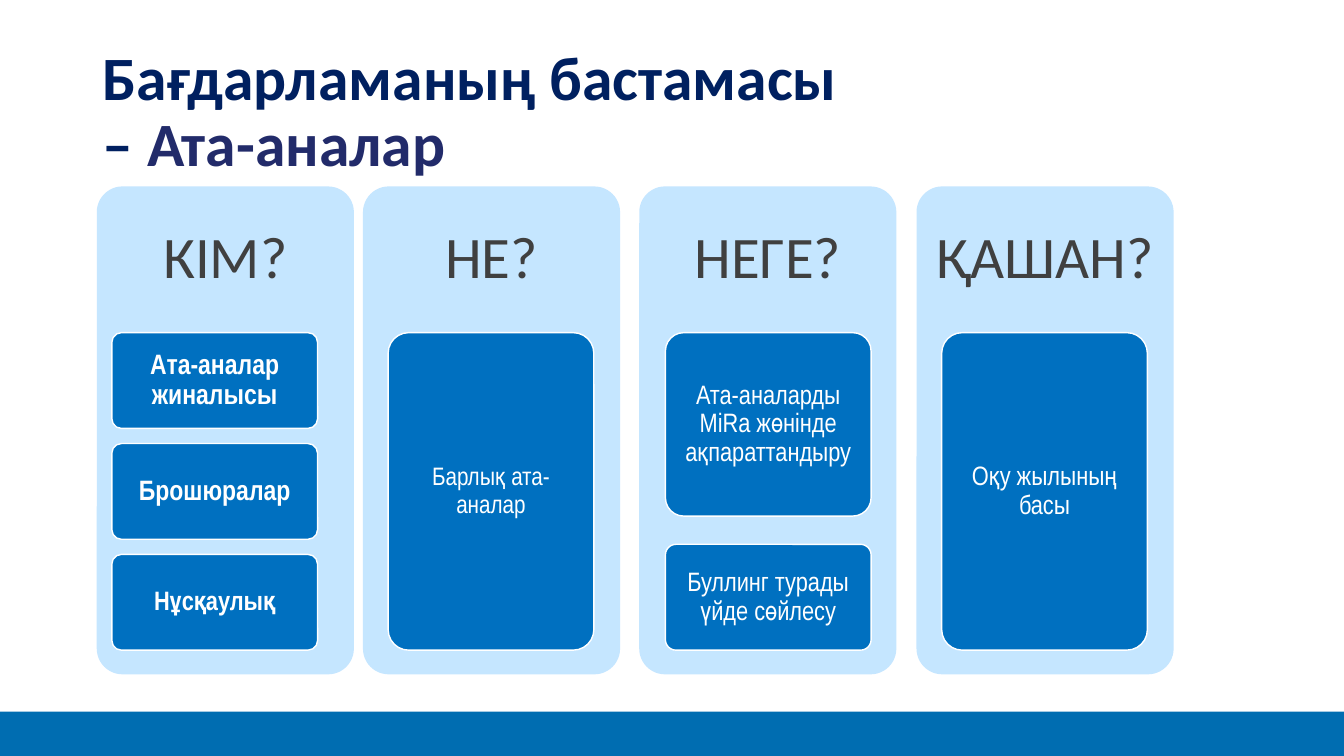
from dataclasses import dataclass

from pptx import Presentation
from pptx.dml.color import RGBColor
from pptx.enum.shapes import MSO_SHAPE
from pptx.enum.text import MSO_ANCHOR, PP_ALIGN
from pptx.shapes.autoshape import Shape
from pptx.slide import Slide
from pptx.util import Inches, Pt

COLORS = {
    "panel": "C5E6FF",
    "card": "0070C0",
    "footer": "006DB1",
    "heading": "404040",
    "title": "002060",
    "subtitle": "222B6A",
    "white": "FFFFFF",
}
PANEL_TOP, PANEL_WIDTH, PANEL_HEIGHT = 1.85, 2.55, 4.84
HEADING_HEIGHT = 1.45
CARD_WIDTH = 2.04


@dataclass(frozen=True)
class Card:
    text: str
    top: float
    height: float
    size: int = 19
    bold: bool = False


@dataclass(frozen=True)
class Column:
    heading: str
    left: float
    card_left: float
    cards: tuple[Card, ...]


COLUMNS = (
    Column("КІМ?", 0.96, 1.11, (
        Card("Ата-аналар жиналысы", 3.3, 0.95, 20, True),
        Card("Брошюралар", 4.4, 0.95, 20, True),
        Card("Нұсқаулық", 5.5, 0.95, 19, True),
    )),
    Column("НЕ?", 3.6, 3.85, (Card("Барлық ата-аналар", 3.3, 3.15, 18),)),
    Column("НЕГЕ?", 6.34, 6.6, (
        Card("Ата-аналарды MiRa жөнінде ақпараттандыру", 3.3, 1.82),
        Card("Буллинг турады үйде сөйлесу", 5.4, 1.05),
    )),
    Column("ҚАШАН?", 9.09, 9.34, (Card("Оқу жылының басы", 3.3, 3.15),)),
)


def color(name: str) -> RGBColor:
    return RGBColor.from_string(COLORS[name])


def add_block(slide: Slide, kind: MSO_SHAPE, left: float, top: float,
              width: float, height: float, fill: str) -> Shape:
    shape = slide.shapes.add_shape(
        kind, Inches(left), Inches(top), Inches(width), Inches(height))
    shape.shadow.inherit = False
    shape.fill.solid()
    shape.fill.fore_color.rgb = color(fill)
    shape.line.fill.background()
    if kind == MSO_SHAPE.ROUNDED_RECTANGLE:
        shape.adjustments[0] = 0.1
    return shape


def set_text(shape: Shape, text: str, font: str, size: int, font_color: str,
             bold: bool, side: float, edge: float,
             alignment: PP_ALIGN = PP_ALIGN.CENTER) -> None:
    frame = shape.text_frame
    frame.text = text
    frame.word_wrap = True
    frame.vertical_anchor = MSO_ANCHOR.MIDDLE
    frame.margin_left = frame.margin_right = Inches(side)
    frame.margin_top = frame.margin_bottom = Inches(edge)
    paragraph = frame.paragraphs[0]
    paragraph.alignment = alignment
    paragraph.line_spacing = 0.9
    for run in paragraph.runs:
        run.font.name = font
        run.font.size = Pt(size)
        run.font.bold = bold
        run.font.color.rgb = color(font_color)


def add_title(slide: Slide) -> None:
    box = slide.shapes.add_textbox(
        Inches(0.92), Inches(0.4), Inches(11.5), Inches(1.45))
    set_text(box, "Бағдарламаның бастамасы\v– Ата-аналар", "Calibri", 44,
             "title", True, 0.1, 0.05, PP_ALIGN.LEFT)
    paragraph = box.text_frame.paragraphs[0]
    dash = paragraph.runs[-1]
    dash.text = "– "
    subtitle = paragraph.add_run()
    subtitle.text = "Ата-аналар"
    subtitle.font.name = "Calibri"
    subtitle.font.size = Pt(44)
    subtitle.font.bold = True
    subtitle.font.color.rgb = color("subtitle")


def add_column(slide: Slide, column: Column) -> None:
    add_block(slide, MSO_SHAPE.ROUNDED_RECTANGLE, column.left, PANEL_TOP,
              PANEL_WIDTH, PANEL_HEIGHT, "panel")
    heading = slide.shapes.add_textbox(
        Inches(column.left), Inches(PANEL_TOP),
        Inches(PANEL_WIDTH), Inches(HEADING_HEIGHT))
    set_text(heading, column.heading, "Calibri", 42, "heading", False, 0.17, 0.17)
    for card in column.cards:
        shape = add_block(slide, MSO_SHAPE.ROUNDED_RECTANGLE, column.card_left,
                          card.top, CARD_WIDTH, card.height, "card")
        shape.line.color.rgb = color("white")
        shape.line.width = Pt(1)
        set_text(shape, card.text, "Arial Narrow", card.size, "white",
                 card.bold, 0.05, 0.04)


def main() -> None:
    """Build the slide on launching the programme with parents."""
    presentation = Presentation()
    presentation.slide_width = Inches(13.33)
    presentation.slide_height = Inches(7.5)
    slide = presentation.slides.add_slide(presentation.slide_layouts[6])
    add_block(slide, MSO_SHAPE.RECTANGLE, 0, 7.06, 13.33, 0.44, "footer")
    add_title(slide)
    for column in COLUMNS:
        add_column(slide, column)
    presentation.save("out.pptx")


if __name__ == "__main__":
    main()
